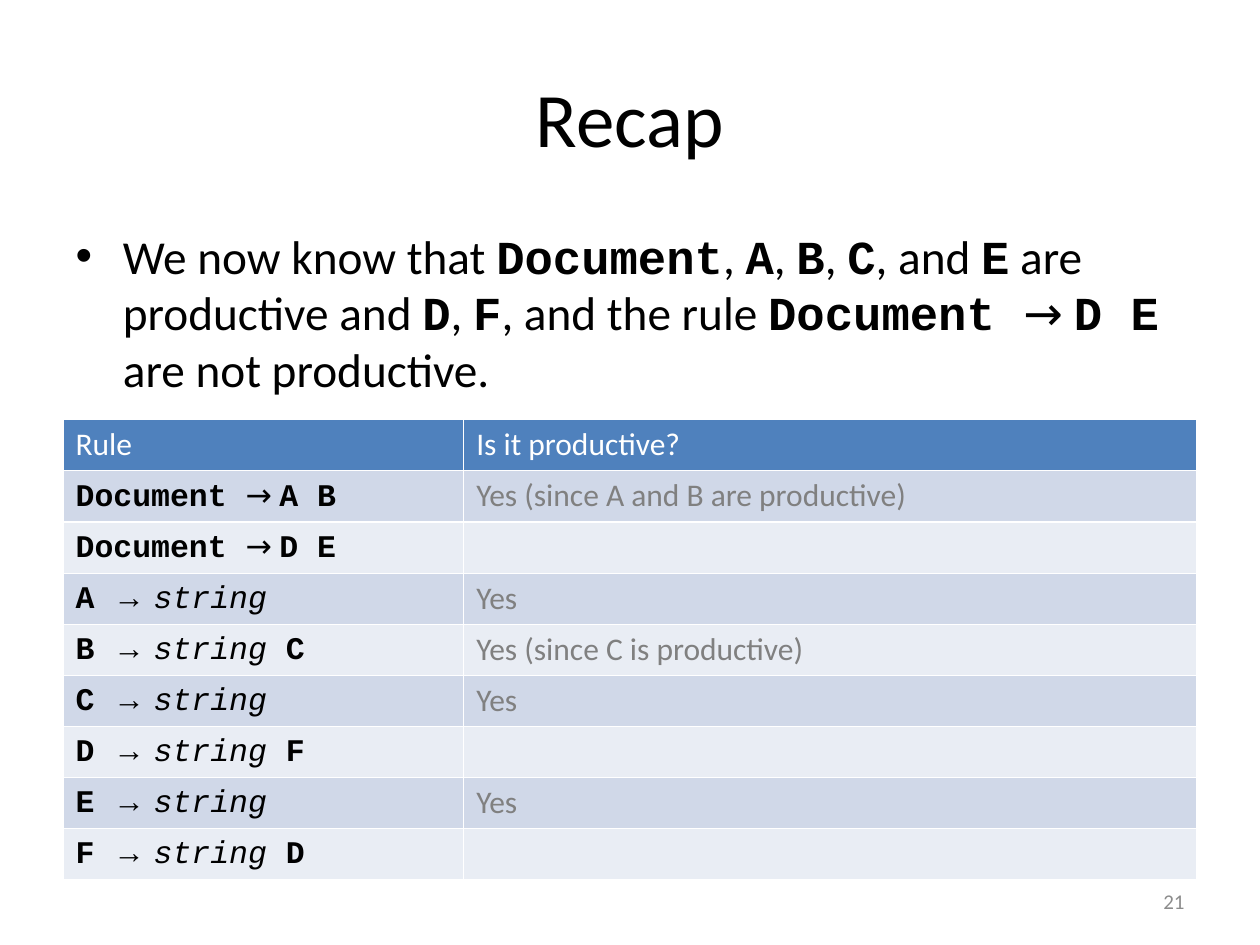
from pptx import Presentation
from pptx.dml.color import RGBColor
from pptx.enum.text import MSO_ANCHOR, MSO_AUTO_SIZE, PP_ALIGN
from pptx.util import Inches, Pt

COLORS = {"text": "000000", "header_text": "FFFFFF", "answer": "808080", "number": "8C8C8C",
          "header": "4F81BD", "odd_row": "D0D8E8", "even_row": "E9EDF4"}
STYLES = {
    "plain": {"name": "Calibri", "bold": False, "italic": False},
    "symbol": {"name": "Courier New", "bold": True, "italic": False},
    "terminal": {"name": "Courier New", "bold": False, "italic": True},
    "arrow": {"name": "Roboto Condensed", "bold": False, "italic": False},
    "thin_arrow": {"name": "Arial", "bold": False, "italic": False},
}


def add_runs(paragraph, pieces, size, color):
    for style, text in pieces:
        run = paragraph.add_run()
        run.text = text
        run.font.size = Pt(size)
        run.font.color.rgb = RGBColor.from_string(COLORS[color])
        for attribute, value in STYLES[style].items():
            setattr(run.font, attribute, value)


def place(part, left, top, width, height):
    part.left, part.top = Inches(left), Inches(top)
    part.width, part.height = Inches(width), Inches(height)


deck = Presentation()
deck.slide_width, deck.slide_height = Inches(10), Inches(7.5)
slide = deck.slides.add_slide(deck.slide_layouts[1])

title = slide.shapes.title
place(title, 0.5, 0.3, 9, 1.25)
title.text_frame.vertical_anchor = MSO_ANCHOR.MIDDLE
heading = title.text_frame.paragraphs[0]
heading.alignment = PP_ALIGN.CENTER
add_runs(heading, [("plain", "Recap")], 44, "text")

summary = slide.placeholders[1]
place(summary, 0.5, 1.75, 9, 1.58)
summary.text_frame.auto_size = MSO_AUTO_SIZE.NONE
add_runs(summary.text_frame.paragraphs[0], [
    ("plain", "We now know that "), ("symbol", "Document"), ("plain", ", "),
    ("symbol", "A"), ("plain", ", "), ("symbol", "B"), ("plain", ", "),
    ("symbol", "C"), ("plain", ", and "), ("symbol", "E"),
    ("plain", " are productive and "), ("symbol", "D"), ("plain", ", "),
    ("symbol", "F"), ("plain", ", and the rule "), ("symbol", "Document "),
    ("arrow", "→ "), ("symbol", "D E"), ("plain", " are not productive."),
], 27, "text")

productions = [
    ([("symbol", "Document "), ("arrow", "→ "), ("symbol", "A B")],
     "Yes (since A and B are productive)"),
    ([("symbol", "Document "), ("arrow", "→ "), ("symbol", "D E")], ""),
]
for left_side, right_side, answer in [
    ("A", "", "Yes"),
    ("B", " C", "Yes (since C is productive)"),
    ("C", "", "Yes"),
    ("D", " F", ""),
    ("E", "", "Yes"),
    ("F", " D", ""),
]:
    rule = [("symbol", left_side + " "), ("thin_arrow", "→ "), ("terminal", "string")]
    if right_side:
        rule.append(("symbol", right_side))
    productions.append((rule, answer))

row_count = len(productions) + 1
rules = slide.shapes.add_table(row_count, 2, Inches(0.5), Inches(3.33),
                               Inches(9), Inches(3.65)).table
for column, width in zip(rules.columns, (3.18, 5.82)):
    column.width = Inches(width)
for row in rules.rows:
    row.height = Inches(3.65 / row_count)

rows = [([("plain", "Rule")], "Is it productive?")] + productions
for index, (rule, answer) in enumerate(rows):
    if index == 0:
        fill, rule_color, answer_color = "header", "header_text", "header_text"
    else:
        fill, rule_color, answer_color = "odd_row" if index % 2 else "even_row", "text", "answer"
    answer_pieces = [("plain", answer)] if answer else []
    contents = [(rule, rule_color), (answer_pieces, answer_color)]
    for cell, (pieces, color) in zip(rules.rows[index].cells, contents):
        cell.fill.solid()
        cell.fill.fore_color.rgb = RGBColor.from_string(COLORS[fill])
        add_runs(cell.text_frame.paragraphs[0], pieces, 18, color)

page = slide.shapes.add_textbox(Inches(7.17), Inches(6.95), Inches(2.33), Inches(0.4))
page.text_frame.word_wrap = True
page.text_frame.vertical_anchor = MSO_ANCHOR.MIDDLE
page_number = page.text_frame.paragraphs[0]
page_number.alignment = PP_ALIGN.RIGHT
add_runs(page_number, [("plain", "21")], 12, "number")

deck.save("out.pptx")
